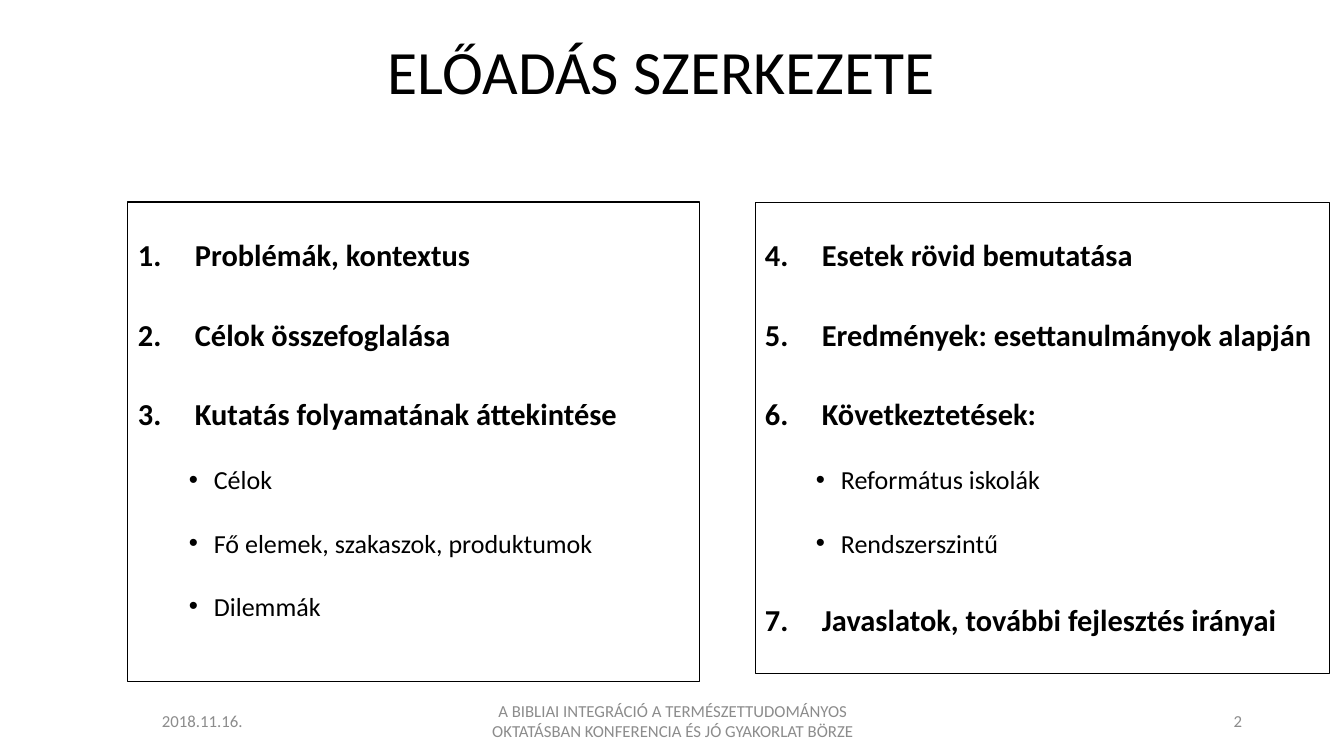
from dataclasses import dataclass

import lxml.etree
import pptx
import pptx.dml.color
import pptx.enum.shapes
import pptx.enum.text
import pptx.oxml.ns
import pptx.util

EMU_PER_PX = 914400 / 100.8
BLACK = pptx.dml.color.RGBColor(0x00, 0x00, 0x00)
GRAY = pptx.dml.color.RGBColor(0x8C, 0x8C, 0x8C)
FONT = "Calibri"
ALIGN = pptx.enum.text.PP_ALIGN
MIDDLE = pptx.enum.text.MSO_ANCHOR.MIDDLE


@dataclass(frozen=True)
class Box:
    left: int
    top: int
    width: int
    height: int


@dataclass(frozen=True)
class Label:
    text: str
    box: Box
    size: float
    color: pptx.dml.color.RGBColor
    align: ALIGN = ALIGN.LEFT
    line_spacing: float = 1.0


@dataclass(frozen=True)
class Level:
    margin: int
    hanging: int
    size: float
    bold: bool
    space_before: int


@dataclass(frozen=True)
class Item:
    text: str
    depth: int = 0


@dataclass(frozen=True)
class Panel:
    box: Box
    line_width: float
    first_number: int
    items: tuple[Item, ...]


LEVELS = (Level(57, 57, 21.7, True, 10), Level(76, 25, 18.6, False, 5))

LABELS = (
    Label("ELŐADÁS SZERKEZETE", Box(378, 2, 854, 146), 44, BLACK, line_spacing=0.9),
    Label("2018.11.16.", Box(152, 701, 243, 40), 12, GRAY),
    Label("A BIBLIAI INTEGRÁCIÓ A TERMÉSZETTUDOMÁNYOS OKTATÁSBAN KONFERENCIA "
          "ÉS JÓ GYAKORLAT BÖRZE", Box(446, 701, 454, 40), 12, GRAY, ALIGN.CENTER),
    Label("2", Box(950, 701, 302, 40), 12, GRAY, ALIGN.RIGHT),
)

PANELS = (
    Panel(Box(128, 202, 572, 480), 0.75, 1, (
        Item("Problémák, kontextus"),
        Item("Célok összefoglalása"),
        Item("Kutatás folyamatának áttekintése"),
        Item("Célok", 1),
        Item("Fő elemek, szakaszok, produktumok", 1),
        Item("Dilemmák", 1),
    )),
    Panel(Box(755, 202, 574, 471), 0.25, 4, (
        Item("Esetek rövid bemutatása"),
        Item("Eredmények: esettanulmányok alapján"),
        Item("Következtetések:"),
        Item("Református iskolák", 1),
        Item("Rendszerszintű", 1),
        Item("Javaslatok, további fejlesztés irányai"),
    )),
)


def px(length: int) -> pptx.util.Emu:
    return pptx.util.Emu(round(length * EMU_PER_PX))


def place(box: Box) -> tuple[pptx.util.Emu, ...]:
    return px(box.left), px(box.top), px(box.width), px(box.height)


def format_runs(paragraph, size: float, color: pptx.dml.color.RGBColor,
                bold: bool = False) -> None:
    for run in paragraph.runs:
        run.font.name = FONT
        run.font.size = pptx.util.Pt(size)
        run.font.bold = bold
        run.font.color.rgb = color


def add_marker(paragraph, depth: int, first_number: int) -> None:
    """Number the main items and put a dot before the sub-items."""
    level = LEVELS[depth]
    properties = paragraph._p.get_or_add_pPr()
    properties.set("marL", str(px(level.margin)))
    properties.set("indent", str(-px(level.hanging)))
    qn = pptx.oxml.ns.qn
    face = lxml.etree.SubElement(properties, qn("a:buFont"))
    if depth:
        face.set("typeface", "Arial")
        lxml.etree.SubElement(properties, qn("a:buChar")).set("char", "•")
    else:
        face.set("typeface", "+mj-lt")
        number = lxml.etree.SubElement(properties, qn("a:buAutoNum"))
        number.set("type", "arabicPeriod")
        number.set("startAt", str(first_number))


def draw_label(slide, label: Label) -> None:
    frame = slide.shapes.add_textbox(*place(label.box)).text_frame
    frame.word_wrap = True
    frame.vertical_anchor = MIDDLE
    frame.text = label.text
    paragraph = frame.paragraphs[0]
    paragraph.alignment = label.align
    paragraph.line_spacing = label.line_spacing
    format_runs(paragraph, label.size, label.color)


def draw_panel(slide, panel: Panel) -> None:
    outline = slide.shapes.add_shape(
        pptx.enum.shapes.MSO_SHAPE.RECTANGLE, *place(panel.box))
    outline.shadow.inherit = False
    outline.fill.background()
    outline.line.color.rgb = BLACK
    outline.line.width = pptx.util.Pt(panel.line_width)
    frame = outline.text_frame
    frame.word_wrap = True
    frame.vertical_anchor = pptx.enum.text.MSO_ANCHOR.TOP
    for index, item in enumerate(panel.items):
        level = LEVELS[item.depth]
        paragraph = frame.add_paragraph() if index else frame.paragraphs[0]
        paragraph.text = item.text
        paragraph.level = item.depth
        add_marker(paragraph, item.depth, panel.first_number)
        paragraph.alignment = ALIGN.LEFT
        paragraph.line_spacing = 1.8
        paragraph.space_before = pptx.util.Pt(level.space_before if index else 0)
        format_runs(paragraph, level.size, BLACK, level.bold)


def main() -> None:
    presentation = pptx.Presentation()
    presentation.slide_width = px(1344)
    presentation.slide_height = px(756)
    slide = presentation.slides.add_slide(presentation.slide_layouts[6])

    # Numbered outline in two columns
    for panel in PANELS:
        draw_panel(slide, panel)

    # Title and footer
    for label in LABELS:
        draw_label(slide, label)

    presentation.save("out.pptx")


if __name__ == "__main__":
    main()
